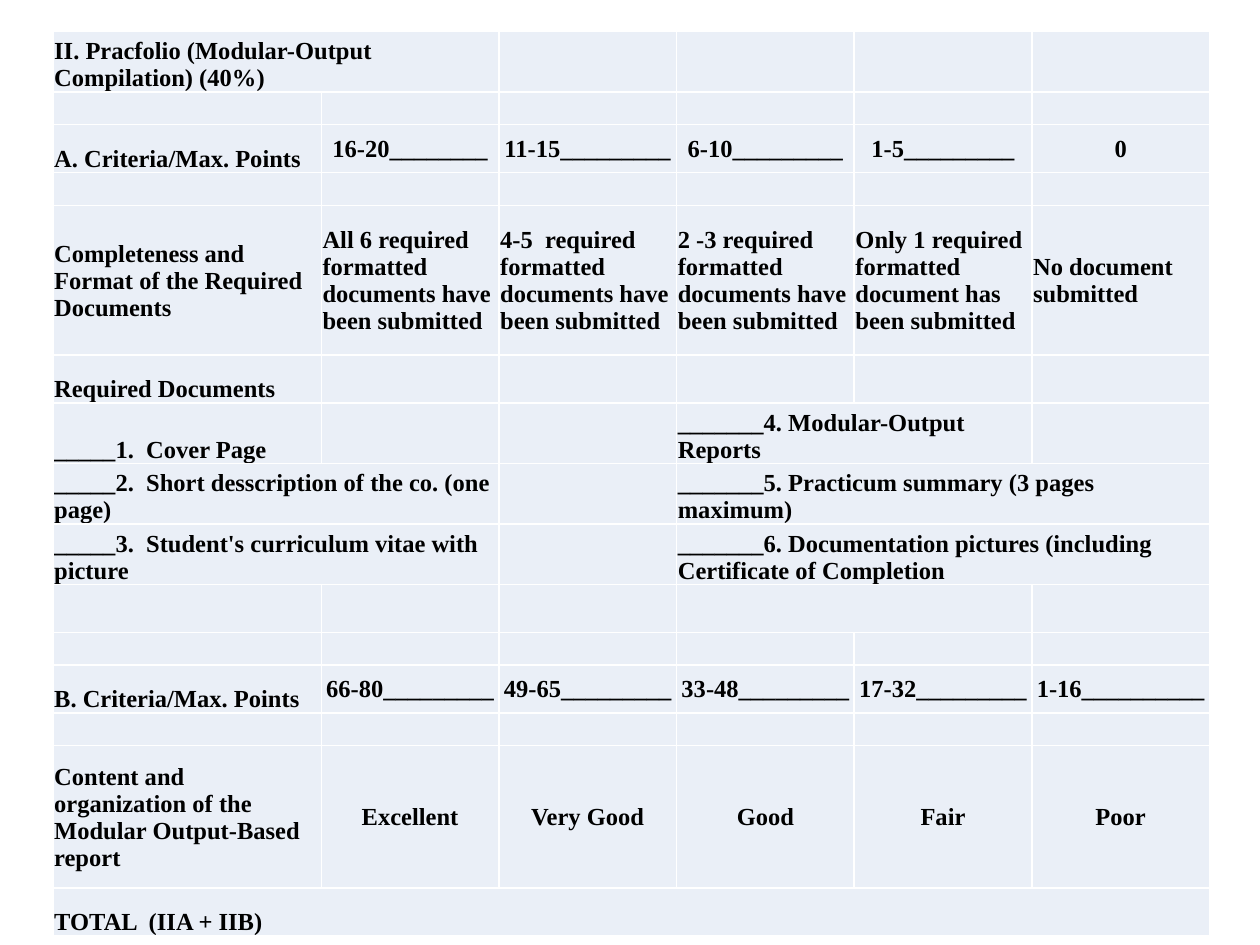
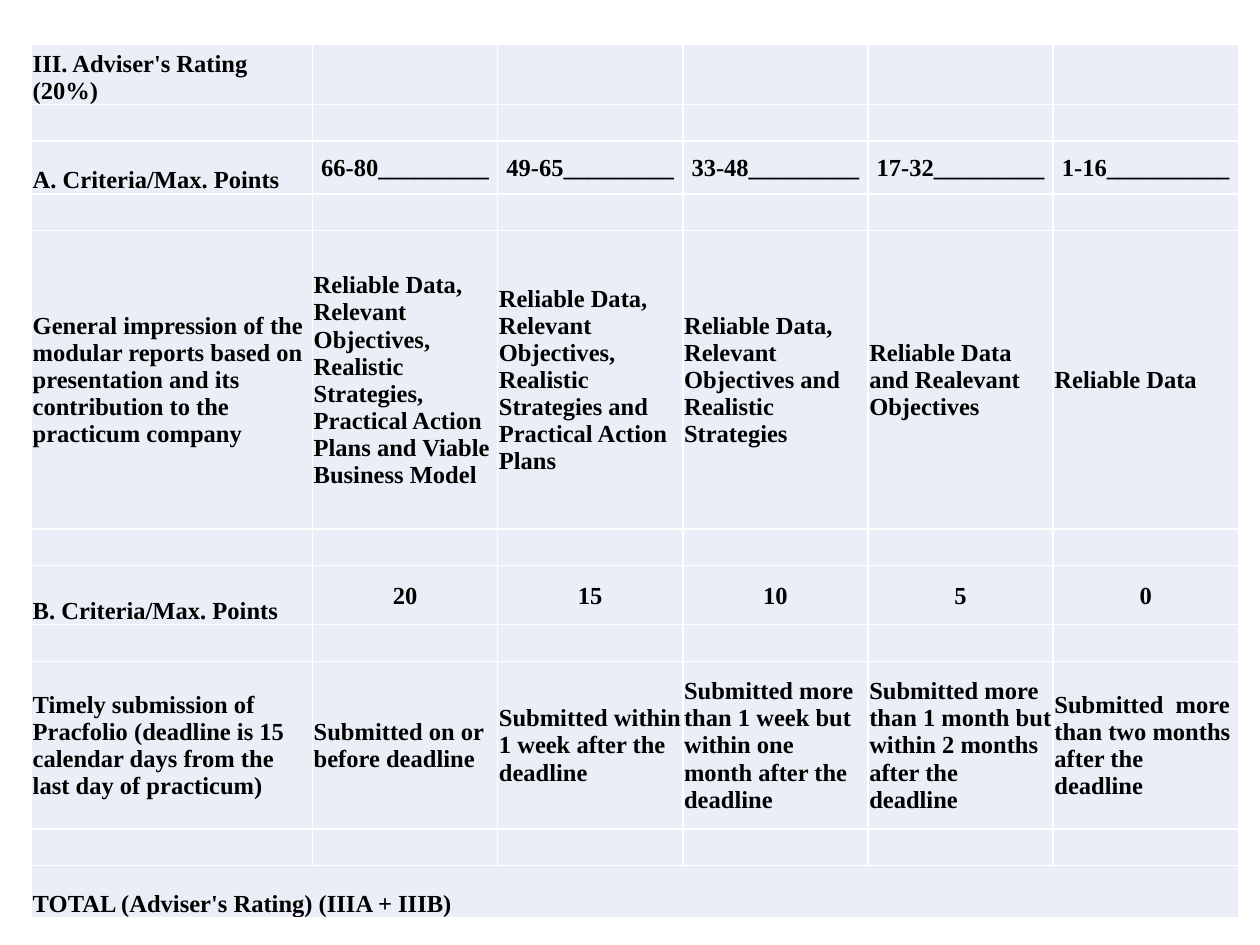
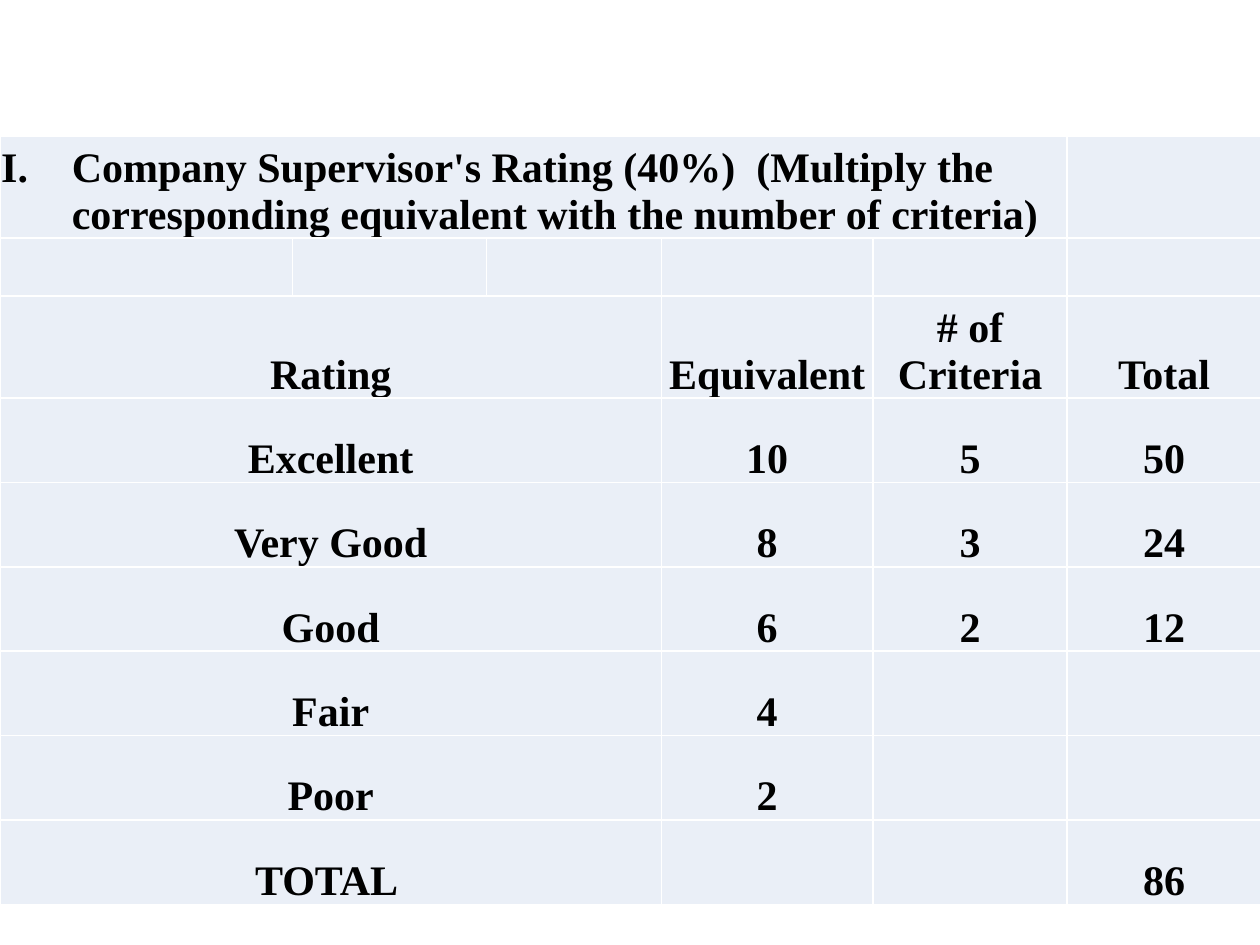
from dataclasses import dataclass
from typing import NamedTuple

from lxml.etree import SubElement
from pptx import Presentation
from pptx.dml.color import RGBColor
from pptx.enum.text import MSO_ANCHOR as Anchor, PP_ALIGN as Align
from pptx.oxml.ns import qn
from pptx.util import Inches, Pt

# Shared look
FONT = "Times New Roman"
INK = RGBColor(0x00, 0x00, 0x00)
CELL_FILL = RGBColor(0xEA, 0xEF, 0xF7)
GRID_LINE = RGBColor(0xFF, 0xFF, 0xFF)
CELL_INSET = Inches(0.01)
NUMBER_INDENT = Inches(0.56)
BLANK_LAYOUT = 6


class Placement(NamedTuple):
    anchor: Anchor
    align: Align


class RowStyle(NamedTuple):
    label: Placement
    values: Placement


LOW_LEFT = Placement(Anchor.BOTTOM, Align.LEFT)
LOW_CENTER = Placement(Anchor.BOTTOM, Align.CENTER)
MID_LEFT = Placement(Anchor.MIDDLE, Align.LEFT)
MID_CENTER = Placement(Anchor.MIDDLE, Align.CENTER)

HEADING = RowStyle(LOW_LEFT, LOW_LEFT)
POINTS = RowStyle(LOW_LEFT, MID_CENTER)
DESCRIPTION = RowStyle(MID_LEFT, MID_LEFT)
GRADES = RowStyle(MID_LEFT, MID_CENTER)
TALLY = RowStyle(LOW_CENTER, LOW_CENTER)


@dataclass
class Row:
    height: float
    texts: tuple[str, ...] = ()
    style: RowStyle = HEADING
    spans: tuple[tuple[int, int], ...] = ()  # (first column, last column)
    numbered: bool = False


@dataclass
class Rubric:
    left: float
    top: float
    columns: list[float]
    rows: list[Row]
    text_size: int


FIVE_LEVELS = ("66-80_________", "49-65_________", "33-48_________",
               "17-32_________", "1-16__________")

PRACFOLIO = Rubric(0.42, 0.25, [2.13] + [1.41] * 5, [
    Row(0.48, ("II. Pracfolio (Modular-Output Compilation) (40%)",),
        spans=((0, 1),)),
    Row(0.26),
    Row(0.38, ("A. Criteria/Max. Points", "16-20________", "11-15_________",
               "6-10_________", "1-5_________", "0"), POINTS),
    Row(0.26),
    Row(1.19, ("Completeness and Format of the Required Documents",
               "All 6 required formatted documents have been submitted",
               "4-5  required formatted documents have been submitted",
               "2 -3 required formatted documents have been submitted",
               "Only 1 required formatted document has been submitted",
               "No document submitted"), DESCRIPTION),
    Row(0.38, ("Required Documents",)),
    Row(0.48, ("_____1.  Cover Page", "", "",
               "_______4. Modular-Output Reports"), spans=((3, 4),)),
    Row(0.48, ("_____2.  Short desscription of the co. (one page)", "", "",
               "_______5. Practicum summary (3 pages maximum)"),
        spans=((0, 1), (3, 5))),
    Row(0.48, ("_____3.  Student's curriculum vitae with picture", "", "",
               "_______6. Documentation pictures (including Certificate of "
               "Completion"), spans=((0, 1), (3, 5))),
    Row(0.38, spans=((3, 4),)),
    Row(0.26),
    Row(0.38, ("B. Criteria/Max. Points", *FIVE_LEVELS), POINTS),
    Row(0.26),
    Row(1.13, ("Content and organization of the Modular Output-Based report",
               "Excellent", "Very Good", "Good", "Fair", "Poor"), GRADES),
    Row(0.38, ("TOTAL  (IIA + IIB)",), spans=((0, 5),)),
], 14)

ADVISER = Rubric(0.25, 0.35, [2.23] + [1.47] * 5, [
    Row(0.48, ("III. Adviser's Rating (20%)",)),
    Row(0.29),
    Row(0.42, ("A. Criteria/Max. Points", *FIVE_LEVELS), POINTS),
    Row(0.29),
    Row(2.37, ("General impression of the modular reports based on "
               "presentation and its contribution to the practicum company",
               "Reliable Data, Relevant Objectives, Realistic Strategies, "
               "Practical Action Plans and Viable Business Model",
               "Reliable Data, Relevant Objectives, Realistic Strategies and "
               "Practical Action Plans",
               "Reliable Data, Relevant Objectives and Realistic Strategies",
               "Reliable Data  and Realevant Objectives",
               "Reliable Data"), DESCRIPTION),
    Row(0.29),
    Row(0.47, ("B. Criteria/Max. Points", "20", "15", "10", "5", "0"), POINTS),
    Row(0.29),
    Row(1.33, ("Timely submission of Pracfolio (deadline is 15 calendar days "
               "from the last day of practicum)",
               "Submitted on or before deadline",
               "Submitted within 1 week after the deadline",
               "Submitted more than 1 week but within one month after the "
               "deadline",
               "Submitted more than 1 month but within 2 months after the "
               "deadline",
               "Submitted  more than two months after the deadline"),
        DESCRIPTION),
    Row(0.29),
    Row(0.42, ("TOTAL (Adviser's Rating) (IIIA + IIIB)",), spans=((0, 5),)),
], 14)


def tally(rating: str, equivalent: str = "", criteria: str = "",
          total: str = "", height: float = 0.67) -> Row:
    """A supervisor row whose rating covers the first three columns."""
    return Row(height, (rating, "", "", equivalent, criteria, total), TALLY,
               ((0, 2),))


SUPERVISOR = Rubric(0, 1.08, [2.32, 1.54, 1.39, 1.68, 1.54, 1.54], [
    Row(0.81, ("Company Supervisor's Rating (40%)  (Multiply the "
               "corresponding equivalent with the number of criteria)",),
        spans=((0, 4),), numbered=True),
    Row(0.46),
    tally("Rating", "Equivalent", "# of Criteria", "Total", height=0.81),
    tally("Excellent", "10", "5", "50"),
    tally("Very Good", "8", "3", "24"),
    tally("Good", "6", "2", "12"),
    tally("Fair", "4"),
    tally("Poor", "2"),
    tally("TOTAL ", total="86"),
], 24)


def style_cell(cell) -> None:
    """Give a cell its insets, white borders and pale fill."""
    cell.margin_left = cell.margin_right = cell.margin_top = CELL_INSET
    cell.margin_bottom = 0
    properties = cell._tc.get_or_add_tcPr()
    for side in ("a:lnL", "a:lnR", "a:lnT", "a:lnB"):
        border = SubElement(properties, qn(side), w=str(Pt(1)))
        line_fill = SubElement(border, qn("a:solidFill"))
        SubElement(line_fill, qn("a:srgbClr"), val=str(GRID_LINE))
    cell.fill.solid()
    cell.fill.fore_color.rgb = CELL_FILL


def write_cell(cell, text: str, placement: Placement, size: int) -> None:
    """Write one run, or size the empty paragraph so the row keeps its height."""
    paragraph = cell.text_frame.paragraphs[0]
    if not text:
        SubElement(paragraph._p, qn("a:endParaRPr"), sz=str(size * 100))
        return
    cell.vertical_anchor = placement.anchor
    paragraph.alignment = placement.align
    run = paragraph.add_run()
    run.text = text
    run.font.name = FONT
    run.font.size = Pt(size)
    run.font.bold = True
    run.font.color.rgb = INK


def number_paragraph(paragraph) -> None:
    """Number a paragraph with a hanging Roman numeral."""
    properties = paragraph._p.get_or_add_pPr()
    properties.set("marL", str(NUMBER_INDENT))
    properties.set("indent", str(-NUMBER_INDENT))
    SubElement(properties, qn("a:buFont"), typeface=FONT)
    SubElement(properties, qn("a:buAutoNum"), type="romanUcPeriod")


def add_rubric(prs, rubric: Rubric) -> None:
    """Add a slide that holds one rubric table."""
    slide = prs.slides.add_slide(prs.slide_layouts[BLANK_LAYOUT])
    table = slide.shapes.add_table(
        len(rubric.rows), len(rubric.columns),
        Inches(rubric.left), Inches(rubric.top),
        Inches(sum(rubric.columns)),
        Inches(sum(row.height for row in rubric.rows))).table
    table.first_row = table.horz_banding = False
    for column, width in zip(table.columns, rubric.columns):
        column.width = Inches(width)

    for r, row in enumerate(rubric.rows):
        table.rows[r].height = Inches(row.height)
        for c in range(len(rubric.columns)):
            cell = table.cell(r, c)
            style_cell(cell)
            text = row.texts[c] if c < len(row.texts) else ""
            placement = row.style.values if c else row.style.label
            write_cell(cell, text, placement, rubric.text_size)
        for first, last in row.spans:
            table.cell(r, first).merge(table.cell(r, last))
        if row.numbered:
            number_paragraph(table.cell(r, 0).text_frame.paragraphs[0])


def main() -> None:
    prs = Presentation()
    prs.slide_width, prs.slide_height = Inches(10), Inches(7.5)
    for rubric in (PRACFOLIO, ADVISER, SUPERVISOR):
        add_rubric(prs, rubric)
    prs.save("out.pptx")


if __name__ == "__main__":
    main()
